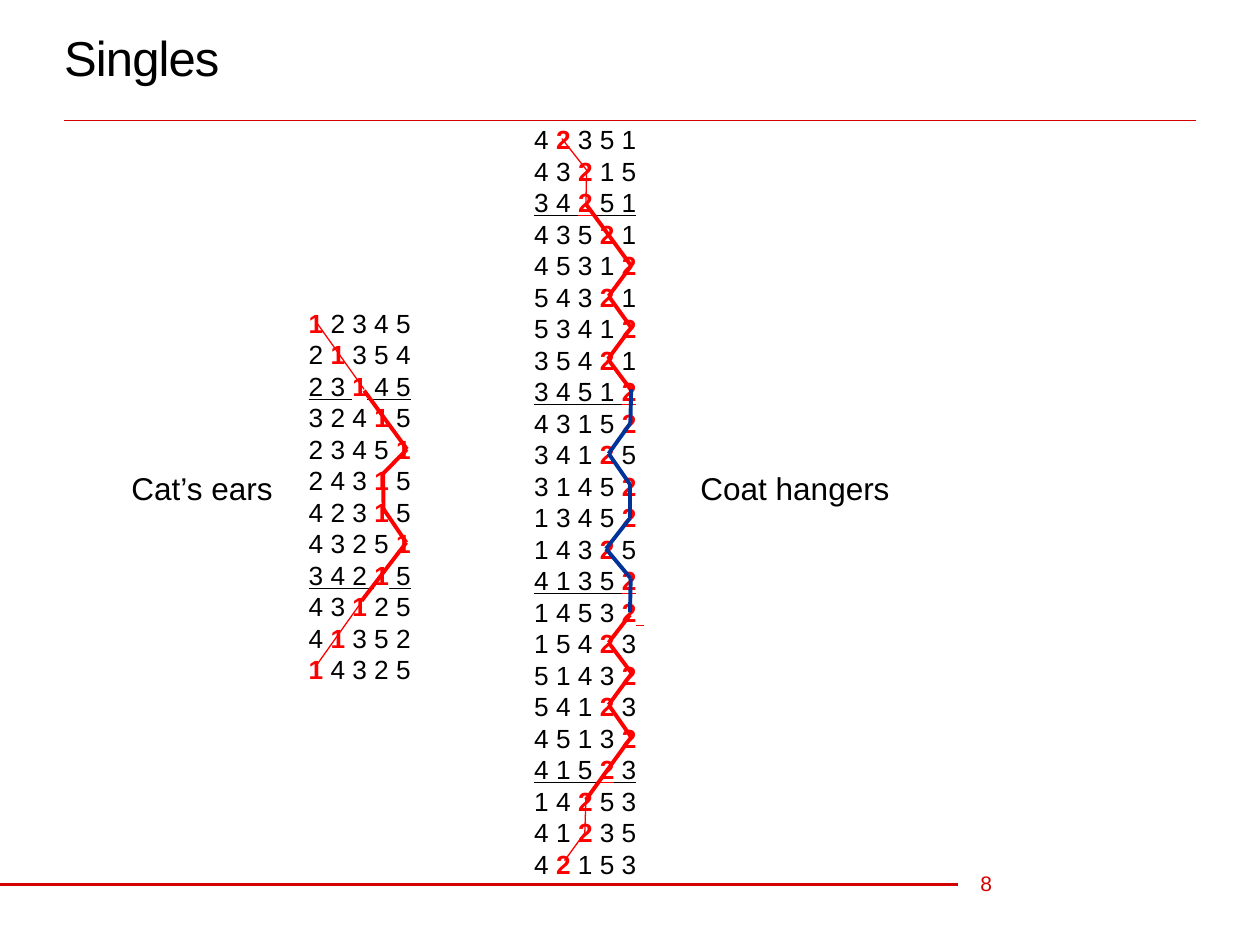
"""Build the "Singles" slide: two blocks of bell changes with the traced path of one bell."""
from dataclasses import dataclass
from itertools import pairwise

from lxml import etree
from pptx import Presentation
from pptx import util as u
from pptx.dml.color import RGBColor
from pptx.enum import shapes, text
from pptx.oxml.ns import qn

RED, BLUE, RULE, BLACK = "FF0000", "003399", "D20000", "000000"
THIN, THICK = 0.75, 2.25


@dataclass
class Label:
    words: str
    box: tuple
    size: float
    color: str = BLACK
    inset: tuple = (0, 0)
    align: text.PP_ALIGN = text.PP_ALIGN.LEFT
    spacing: int = 0


@dataclass
class Changes:
    rows: list
    bell: str
    box: tuple
    top: float
    underlined: set
    bell_underlined: bool


@dataclass
class Path:
    points: list
    color: str = RED
    width: float = THICK


LABELS = [
    Label("8", (560.2, 490.3, 36.7, 28.8), 12, RULE),
    Label("Singles", (36.7, 3.6, 646.6, 58.3), 28, spacing=-50),
    Label("Cat’s ears", (55.4, 264.2, 120.2, 28.8), 18, inset=(7.2, 3.6), align=text.PP_ALIGN.CENTER),
    Label("Coat hangers", (390.2, 264.2, 128.2, 28.8), 18, inset=(7.2, 3.6), align=text.PP_ALIGN.CENTER),
]

BLOCKS = [
    Changes(
        ["1 2 3 4 5", "2 1 3 5 4", "2 3 1 4 5", "3 2 4 1 5", "2 3 4 5 1", "2 4 3 1 5",
         "4 2 3 1 5", "4 3 2 5 1", "3 4 2 1 5", "4 3 1 2 5", "4 1 3 5 2", "1 4 3 2 5"],
        "1", (176.4, 138.2, 148.3, 283.7), 37.4, {3, 9}, False),
    Changes(
        ["4 2 3 5 1", "4 3 2 1 5", "3 4 2 5 1", "4 3 5 2 1", "4 5 3 1 2", "5 4 3 2 1",
         "5 3 4 1 2", "3 5 4 2 1", "3 4 5 1 2", "4 3 1 5 2", "3 4 1 2 5", "3 1 4 5 2",
         "1 3 4 5 2", "1 4 3 2 5", "4 1 3 5 2", "1 4 5 3 2 ", "1 5 4 2 3", "5 1 4 3 2",
         "5 4 1 2 3", "4 5 1 3 2", "4 1 5 2 3", "1 4 2 5 3", "4 1 2 3 5", "4 2 1 5 3"],
        "2", (305.3, 70.6, 316.8, 428.4), 0, {3, 9, 15, 21}, True),
]

RULES = [
    Path([(36.7, 69.1), (683.3, 69.1)], RULE, 0.5),
    Path([(0, 505.4), (547.2, 505.4)], RULE, 2),
]

TRACES = [
    Path([(181.4, 185), (208.1, 222.5)], width=THIN),
    Path([(208.1, 223.2), (232.6, 256.7), (218.9, 270.7), (219.2, 290.9), (232.2, 310), (206.6, 343.4)]),
    Path([(206.2, 344.5), (181.4, 379.4)], width=THIN),
    Path([(321.1, 79.2), (335.2, 97.2), (334.8, 116.3)], width=THIN),
    Path([(334.8, 116.6), (360.7, 151.9), (347.8, 169.2), (360.7, 187.2), (347.4, 205.2), (360.7, 223)]),
    Path([(360.7, 222.5), (360.2, 241.9), (347.8, 259.2), (360, 276.8), (360, 296.1),
          (346.3, 313.6), (360.4, 330.5), (360, 349.9)], BLUE),
    Path([(360, 351.4), (347.8, 367.2), (361, 384.8), (347.8, 402.8), (360.7, 421.2), (334.8, 457)]),
    Path([(334.8, 456.5), (334.2, 475.9), (322.6, 491.8)], width=THIN),
]


def rgb(value: str) -> RGBColor:
    """Turn a hex string into a colour."""
    return RGBColor.from_string(value)


def apply(target, values: dict) -> None:
    """Set every attribute named in values on target."""
    for name, value in values.items():
        setattr(target, name, value)


def add_frame(s, box: tuple, anchor, inset: tuple = (0, 0)):
    """Add a wrapping text box and return its text frame."""
    tf = s.shapes.add_textbox(*map(u.Pt, box)).text_frame
    x, y = map(u.Pt, inset)
    apply(tf, {"word_wrap": True, "vertical_anchor": anchor, "margin_left": x,
               "margin_right": x, "margin_top": y, "margin_bottom": y})
    return tf


def add_run(p, words: str, size: float, color: str, **style):
    """Append a formatted run to a paragraph."""
    r = p.add_run()
    r.text = words
    apply(r.font, {"name": "Arial", "size": u.Pt(size), **style})
    r.font.color.rgb = rgb(color)
    return r


def draw_label(s, label: Label) -> None:
    """Draw a single line of text."""
    p = add_frame(s, label.box, text.MSO_ANCHOR.MIDDLE, label.inset).paragraphs[0]
    p.alignment = label.align
    r = add_run(p, label.words, label.size, label.color)
    if label.spacing:
        r.font._element.set("spc", str(label.spacing))


def draw_changes(s, block: Changes) -> None:
    """Draw rows of changes with the followed bell in bold red."""
    tf = add_frame(s, block.box, text.MSO_ANCHOR.TOP)
    tf.margin_top = u.Pt(block.top)
    for number, row in enumerate(block.rows, 1):
        p = tf.paragraphs[0] if number == 1 else tf.add_paragraph()
        p.line_spacing = u.Pt(18)
        line = number in block.underlined
        before, bell, after = row.partition(block.bell)
        trailing = after.isspace()
        runs = [(before, BLACK, False, line),
                (bell, RED, True, line and block.bell_underlined),
                (after, RED if trailing else BLACK, False, line or trailing)]
        for words, color, bold, underline in runs:
            if words:
                add_run(p, words, 15, color, bold=bold, underline=underline)


def draw_path(s, path: Path) -> None:
    """Join consecutive points with straight connectors."""
    for start, end in pairwise(path.points):
        sp = s.shapes.add_connector(shapes.MSO_CONNECTOR.STRAIGHT, *map(u.Pt, start + end))
        sp.line.color.rgb = rgb(path.color)
        sp.line.width = u.Pt(path.width)
        etree.SubElement(sp._element.spPr, qn("a:effectLst"))


def main() -> None:
    """Build and save the slide."""
    prs = Presentation()
    apply(prs, {"slide_width": u.Pt(720), "slide_height": u.Pt(540)})
    s = prs.slides.add_slide(prs.slide_layouts[6])
    for draw, items in ((draw_path, RULES), (draw_label, LABELS),
                        (draw_changes, BLOCKS), (draw_path, TRACES)):
        for item in items:
            draw(s, item)
    prs.save("out.pptx")


if __name__ == "__main__":
    main()
